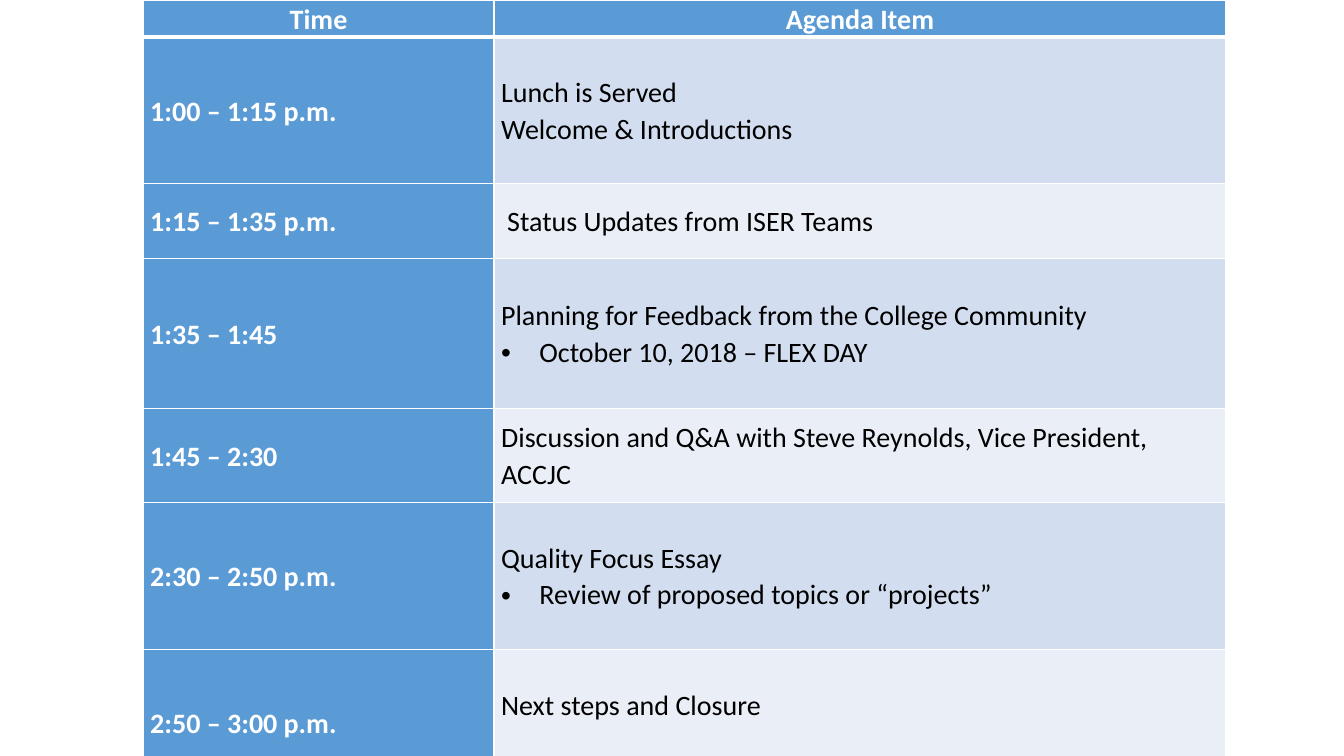
import pptx
import pptx.dml.color
import pptx.enum.text
import pptx.util
from lxml import etree
from pptx.dml.color import RGBColor
from pptx.oxml.ns import qn
from pptx.util import Inches, Pt

WHITE = RGBColor(0xFF, 0xFF, 0xFF)
BLACK = RGBColor(0x00, 0x00, 0x00)
BLUE = RGBColor(0x5B, 0x9B, 0xD5)
BAND_DARK = RGBColor(0xD2, 0xDE, 0xEF)
BAND_LIGHT = RGBColor(0xEA, 0xEF, 0xF7)

BULLET = "•"
COLUMN_WIDTHS = [3.48, 7.26]
# Row height, time, lines of the agenda item
AGENDA = [
    (0.36, "Time", ["Agenda Item"]),
    (1.46, "1:00 – 1:15 p.m.", ["Lunch is Served", "Welcome & Introductions"]),
    (0.74, "1:15 – 1:35 p.m.", ["Status Updates from ISER Teams"]),
    (1.49, "1:35 – 1:45", ["Planning for Feedback from the College Community",
                           BULLET + "October 10, 2018 – FLEX DAY"]),
    (0.93, "1:45 – 2:30", ["Discussion and Q&A with Steve Reynolds, Vice President, ACCJC"]),
    (1.46, "2:30 – 2:50 p.m.", ["Quality Focus Essay",
                                BULLET + "Review of proposed topics or “projects”"]),
    (1.46, "2:50 – 3:00 p.m.", ["Next steps and Closure"]),
]
STATUS_ROW, CLOSING_ROW = 2, 6


def set_borders(cell, widths):
    """Draw white borders; widths in points, keyed by side, in schema order."""
    properties = cell._tc.get_or_add_tcPr()
    for position, (side, width) in enumerate(widths.items()):
        line = etree.Element(qn("a:ln" + side), w=str(Pt(width)))
        fill = etree.SubElement(line, qn("a:solidFill"))
        etree.SubElement(fill, qn("a:srgbClr"), val=str(WHITE))
        properties.insert(position, line)


def fill_cell(cell, lines, color, bold, centered):
    """Write one paragraph per line, indenting those that start with a bullet."""
    cell.vertical_anchor = pptx.enum.text.MSO_ANCHOR.MIDDLE
    cell.margin_left = cell.margin_right = Inches(0.07)
    cell.margin_top = cell.margin_bottom = 0
    for number, line in enumerate(lines):
        frame = cell.text_frame
        para = frame.add_paragraph() if number else frame.paragraphs[0]
        para.text = line.removeprefix(BULLET)
        para.line_spacing = 1.07
        para.font.name = "Calibri"
        para.font.size = Pt(20)
        para.font.bold = bold
        para.font.color.rgb = color
        if centered:
            para.alignment = pptx.enum.text.PP_ALIGN.CENTER
        if line.startswith(BULLET):
            properties = para._p.get_or_add_pPr()
            properties.set("marL", str(Inches(0.38)))
            properties.set("indent", str(Inches(-0.38)))
            font = etree.SubElement(properties, qn("a:buFont"), typeface="Arial")
            font.addnext(etree.Element(qn("a:buChar"), char=BULLET))
            # Bullet settings come before the default run properties
            properties.append(properties.find(qn("a:defRPr")))


deck = pptx.Presentation()
deck.slide_width = Inches(13.33)
deck.slide_height = Inches(7.5)
page = deck.slides.add_slide(deck.slide_layouts[6])

# Agenda table
table = page.shapes.add_table(
    len(AGENDA), len(COLUMN_WIDTHS), Inches(1.42), 0,
    Inches(sum(COLUMN_WIDTHS)), Inches(sum(row[0] for row in AGENDA))).table
table.first_row = table.first_col = True
table.horz_banding = False
for column, width in zip(table.columns, COLUMN_WIDTHS):
    column.width = Inches(width)

# Header row, then alternating bands beside the blue time column
for row, (height, time, item) in enumerate(AGENDA):
    table.rows[row].height = Inches(height)
    header = row == 0
    for column, lines in enumerate([[time], item]):
        cell = table.cell(row, column)
        strong = header or column == 0
        fill_cell(cell, lines, WHITE if strong else BLACK, strong, header)
        cell.fill.solid()
        cell.fill.fore_color.rgb = BLUE if strong else (BAND_DARK if row % 2 else BAND_LIGHT)
        set_borders(cell, {"L": 1, "R": 1, "T": 3 if row == 1 else 1, "B": 3 if header else 1})

# The status line sits slightly inward, the closing line above the middle
table.cell(STATUS_ROW, 1).margin_left = Inches(0.13)
table.cell(CLOSING_ROW, 1).margin_bottom = Inches(0.36)

deck.save("out.pptx")
